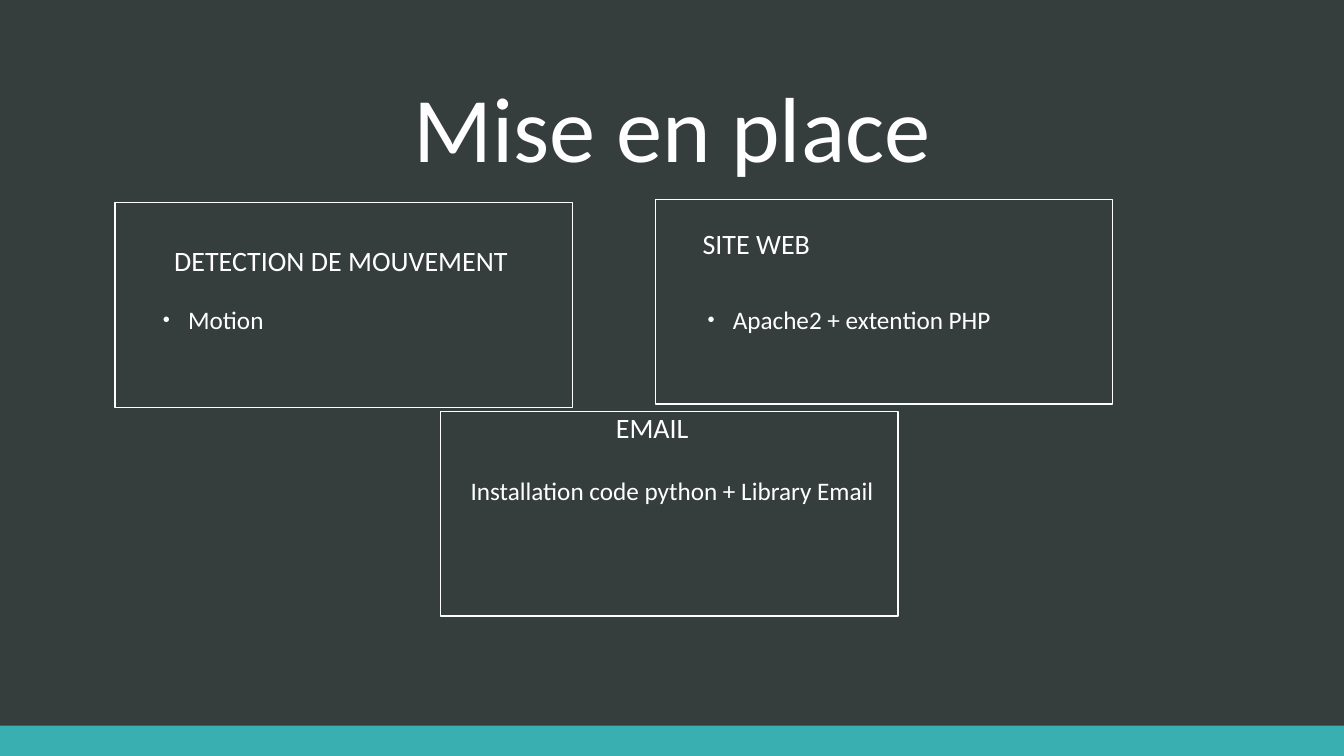
from lxml.etree import SubElement
from pptx import Presentation
from pptx.dml.color import RGBColor
from pptx.enum.shapes import MSO_SHAPE as SHAPE
from pptx.enum.text import MSO_ANCHOR as ANCHOR, MSO_AUTO_SIZE as FIT, PP_ALIGN as ALIGN
from pptx.oxml.ns import qn
from pptx.util import Inches, Pt

COLORS = {"background": "363D3D", "bar": "3AAFB2", "text": "FFFFFF", "frame": "FFFFFF"}
COMPARISON_LAYOUT = 4
HEADING = (37.5, 11.2)
BULLET = (37.5, 5.47)
FRAME = (34.05, 27.07)


def rgb(name):
    return RGBColor.from_string(COLORS[name])


class SlideBuilder:
    """Draws on one slide; every box is (left, top, width, height) in percent of the slide."""

    FONT = {"name": "Calibri", "bold": False}

    def __init__(self, prs):
        self.prs = prs
        self.slide = prs.slides.add_slide(prs.slide_layouts[COMPARISON_LAYOUT])
        fill = self.slide.background.fill
        fill.solid()
        fill.fore_color.rgb = rgb("background")

    def scale(self, box):
        """Turn percentages into slide lengths."""
        sides = (self.prs.slide_width, self.prs.slide_height) * 2
        return [round(share * side / 100) for share, side in zip(box, sides)]

    def set_text(self, sp, text, size, anchor=ANCHOR.TOP, align=ALIGN.LEFT, spacing=0.9,
                 bullet=False):
        tf = sp.text_frame
        tf.text = text
        for name, value in {"word_wrap": True, "auto_size": FIT.NONE,
                            "vertical_anchor": anchor}.items():
            setattr(tf, name, value)
        p = tf.paragraphs[0]
        if bullet:
            self.add_bullet(p)
        for name, value in {"alignment": align, "line_spacing": spacing,
                            "space_before": Pt(0)}.items():
            setattr(p, name, value)
        font = p.runs[0].font
        for name, value in {**self.FONT, "size": Pt(size)}.items():
            setattr(font, name, value)
        font.color.rgb = rgb("text")

    def add_bullet(self, p):
        pPr = p._p.get_or_add_pPr()
        pPr.set("marL", str(Inches(0.3)))
        pPr.set("indent", str(Inches(-0.25)))
        for tag, key, value in (("a:buSzPct", "val", "80000"),
                                ("a:buFont", "typeface", "Arial"),
                                ("a:buChar", "char", "•")):
            SubElement(pPr, qn(tag)).set(key, value)

    def placeholder(self, idx, box, text, size, **style):
        sp = self.slide.placeholders[idx]
        sp.left, sp.top, sp.width, sp.height = self.scale(box)
        self.set_text(sp, text, size, **style)

    def textbox(self, box, text, size, **style):
        self.set_text(self.slide.shapes.add_textbox(*self.scale(box)), text, size, **style)

    def rectangle(self, box, fill=None, line=None):
        sp = self.slide.shapes.add_shape(SHAPE.RECTANGLE, *self.scale(box))
        sp.shadow.inherit = False
        for part, color in ((sp.fill, fill), (sp.line.fill, line)):
            if color:
                part.solid()
                part.fore_color.rgb = rgb(color)
            else:
                part.background()
        if line:
            sp.line.width = Pt(1)


def main():
    prs = Presentation()
    prs.slide_width, prs.slide_height = Inches(13.333), Inches(7.5)
    s = SlideBuilder(prs)

    s.rectangle((0, 96, 100, 4), fill="bar")
    s.placeholder(0, (11, 6.8, 78, 18), "Mise en place", 66,
                  anchor=ANCHOR.BOTTOM, align=ALIGN.CENTER)

    s.placeholder(1, (51.52, 26.8, *HEADING), "SITE WEB", 20, anchor=ANCHOR.MIDDLE)
    s.placeholder(3, (29.78, 51.2, *HEADING), "EMAIL", 20,
                  anchor=ANCHOR.MIDDLE, align=ALIGN.CENTER)
    s.textbox((12.22, 29.07, *HEADING), "DETECTION DE MOUVEMENT", 20, anchor=ANCHOR.MIDDLE)

    for idx, left, text in ((2, 11, "Motion"), (4, 51.52, "Apache2 + extention PHP")):
        s.placeholder(idx, (left, 40, *BULLET), text, 18, bullet=True)
    s.textbox((34.27, 62.27, 34.05, 5.33), "Installation code python + Library Email", 18, spacing=1.0)

    for corner in ((8.55, 26.8), (48.75, 26.4), (32.78, 54.4)):
        s.rectangle((*corner, *FRAME), line="frame")

    prs.save("out.pptx")


if __name__ == "__main__":
    main()
